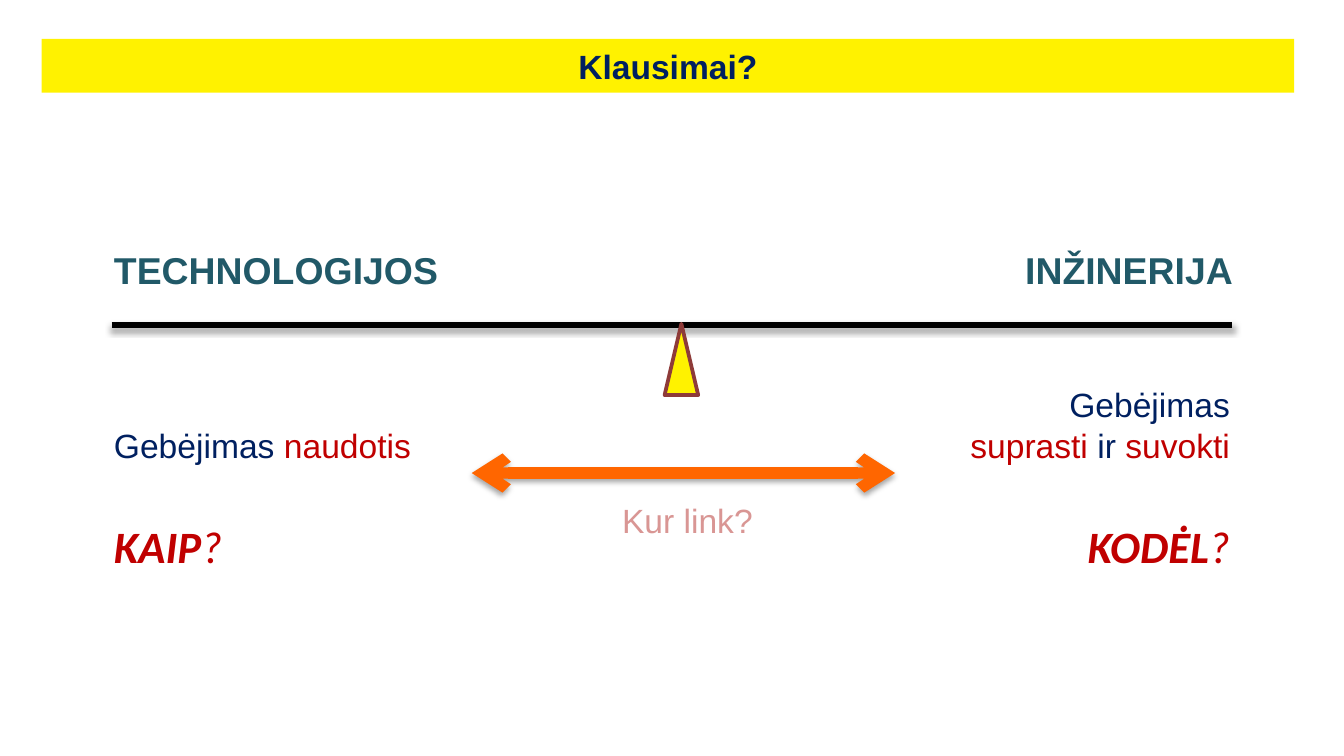
import dataclasses

import pptx
import pptx.dml.color
import pptx.enum.shapes
import pptx.enum.text
import pptx.oxml
import pptx.oxml.ns
import pptx.util

Inches = pptx.util.Inches
Pt = pptx.util.Pt
ALIGN = pptx.enum.text.PP_ALIGN
SHAPE = pptx.enum.shapes.MSO_SHAPE


@dataclasses.dataclass(frozen=True)
class Theme:
    sans: str = "Arial"
    accent_font: str = "Calibri"
    navy: str = "002060"
    red: str = "C00000"
    teal: str = "215968"
    pink: str = "D99694"
    orange: str = "FF6600"
    black: str = "000000"
    yellow: str = "FFF200"
    brown: str = "8E3B39"
    body: int = 18
    heading: int = 20
    question: int = 24


T = Theme()
BODY = dict(name=T.sans, size=Pt(T.body))
HEADING = dict(name=T.sans, size=Pt(T.heading), bold=True, color=T.teal)
QUESTION = dict(name=T.accent_font, size=Pt(T.question), italic=True, color=T.red)
NAVY = dict(BODY, color=T.navy)
RED = dict(BODY, color=T.red)


def rgb(value):
    return pptx.dml.color.RGBColor.from_string(value)


def add_runs(p, runs):
    for text, style in runs:
        r = p.add_run()
        r.text = text
        for key, value in style.items():
            if key == "color":
                r.font.color.rgb = rgb(value)
            else:
                setattr(r.font, key, value)


def add_text(s, box, paragraphs, align=ALIGN.LEFT, wrap=True):
    """Each paragraph is a pair: line spacing and a list of runs."""
    sp = s.shapes.add_textbox(*map(Inches, box))
    tf = sp.text_frame
    tf.word_wrap = wrap
    tf.auto_size = pptx.enum.text.MSO_AUTO_SIZE.SHAPE_TO_FIT_TEXT
    for i, (spacing, runs) in enumerate(paragraphs):
        p = tf.add_paragraph() if i else tf.paragraphs[0]
        p.alignment = align
        p.line_spacing = spacing
        add_runs(p, runs)


def add_line(s, x, y, w, color, width, arrows=False):
    """Horizontal line with a soft shadow below."""
    sp = s.shapes.add_connector(pptx.enum.shapes.MSO_CONNECTOR.STRAIGHT,
                                *map(Inches, (x, y, x + w, y)))
    sp.line.color.rgb = rgb(color)
    sp.line.width = Pt(width)
    ns = pptx.oxml.ns.nsdecls("a")
    if arrows:
        ln = sp.line._get_or_add_ln()
        for end in ("headEnd", "tailEnd"):
            ln.append(pptx.oxml.parse_xml(f'<a:{end} {ns} type="arrow"/>'))
    sp._element.spPr.append(pptx.oxml.parse_xml(
        f'<a:effectLst {ns}><a:outerShdw blurRad="40000" dist="23000" dir="5400000" '
        f'rotWithShape="0"><a:srgbClr val="{T.black}"><a:alpha val="35000"/>'
        '</a:srgbClr></a:outerShdw></a:effectLst>'))


def add_title(s, box):
    sp = s.shapes.title
    sp.left, sp.top, sp.width, sp.height = map(Inches, box)
    sp.fill.solid()
    sp.fill.fore_color.rgb = rgb(T.yellow)
    tf = sp.text_frame
    tf.auto_size = pptx.enum.text.MSO_AUTO_SIZE.NONE
    p = tf.paragraphs[0]
    p.alignment = ALIGN.CENTER
    add_runs(p, [("Klausimai?", dict(NAVY, bold=True))])


def add_balance(s, x, y, w):
    """Beam resting on a triangular pivot."""
    add_line(s, x, y, w, T.black, 3)
    pivot_w = 0.25
    sp = s.shapes.add_shape(SHAPE.ISOSCELES_TRIANGLE, *map(
        Inches, (x + w / 2 - pivot_w / 2 + 0.07, y - 0.01, pivot_w, 0.53)))
    sp.shadow.inherit = False
    sp.fill.solid()
    sp.fill.fore_color.rgb = rgb(T.yellow)
    sp.line.color.rgb = rgb(T.brown)
    sp.line.width = Pt(2)


def add_link(s, x, y, w):
    """Two-way arrow with its caption."""
    add_text(s, (x + 1.02, y + 0.15, 1.18, 0.4),
             [(1, [("Kur link?", dict(BODY, color=T.pink))])], wrap=False)
    add_line(s, x, y, w, T.orange, 6, arrows=True)


def add_side(s, y, heading, heading_x, heading_w, body_box, ability, question, align):
    """Heading above the beam, ability and question below it."""
    add_text(s, (heading_x, y, heading_w, 0.44), [(1, [(heading, HEADING)])], wrap=False)
    spacing, runs = ability
    x, w, h = body_box
    add_text(s, (x, y + 1.02, w, h), [
        (spacing, runs),
        (2, [(question, dict(QUESTION, bold=True)), ("?", dict(QUESTION, bold=False))]),
    ], align)


def main():
    prs = pptx.Presentation()
    prs.slide_width = Inches(10)
    prs.slide_height = prs.slide_width * 9 // 16
    s = prs.slides.add_slide(prs.slide_layouts[5])

    add_title(s, (0.31, 0.29, 9.32, 0.4))
    add_link(s, 3.51, 3.52, 3.15)
    add_balance(s, 0.83, 2.42, 8.34)
    add_side(s, 1.79, "TECHNOLOGIJOS", 0.75, 2.63, (0.75, 2.76, 1.4),
             (2, [("Gebėjimas ", NAVY), ("naudotis", RED)]), "KAIP", ALIGN.LEFT)
    add_side(s, 1.79, "INŽINERIJA", 7.53, 1.76, (7.05, 2.2, 1.51),
             (1, [("Gebėjimas ", NAVY), ("suprasti ", RED), ("ir", NAVY), (" suvokti", RED)]),
             "KODĖL", ALIGN.RIGHT)
    prs.save("out.pptx")


if __name__ == "__main__":
    main()
